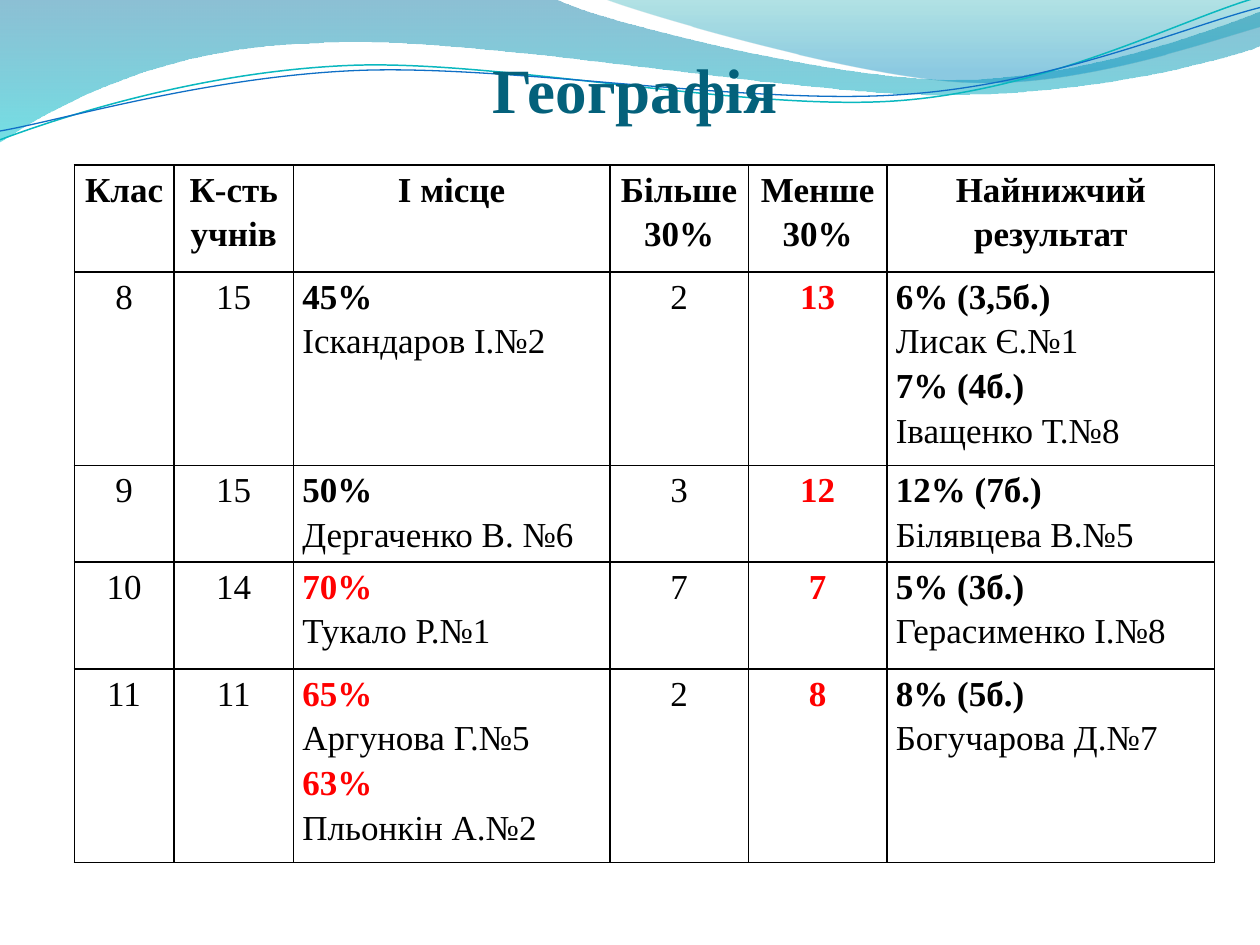
"""Build the geography results slide with its wave header and class table."""
from lxml import etree
from pptx import Presentation
from pptx.dml.color import RGBColor
from pptx.enum.text import MSO_ANCHOR, PP_ALIGN
from pptx.oxml.ns import qn
from pptx.util import Inches, Pt

CENTER, LEFT = PP_ALIGN.CENTER, PP_ALIGN.LEFT
BOTTOM = MSO_ANCHOR.BOTTOM
FONT = "Times New Roman"
BLACK, RED, TEAL = "000000", "FF0000", "04617B"

TITLE = "Географія"
ROWS = [
    ("Клас", "К-сть учнів", "І місце", "Більше\n30%", "Менше 30%", "Найнижчий результат"),
    ("8", "15", "45%\nІскандаров І.№2", "2", "13",
     "6% (3,5б.)\nЛисак Є.№1\n7% (4б.)\nІващенко Т.№8"),
    ("9", "15", "50%\nДергаченко В. №6", "3", "12", "12% (7б.)\nБілявцева В.№5"),
    ("10", "14", "70%\nТукало Р.№1", "7", "7", "5% (3б.)\nГерасименко І.№8"),
    ("11", "11", "65%\nАргунова Г.№5\n63%\nПльонкін А.№2", "2", "8",
     "8% (5б.)\nБогучарова Д.№7"),
]
WIDTHS = (0.79, 0.95, 2.51, 1.1, 1.1, 2.6)
HEIGHTS = (0.85, 1.44, 0.76, 0.85, 0.85)
NAMES = (2, 5)
LOW = 4
TOP = {"70%", "65%", "63%"}

WAVES = [
    ([(0, 0), (4.4, -0.01), (4.76, 0.17, 6.64, 0.63, 7.58, 0.63),
      (8.53, 0.63, 9.58, 0.26, 10, 0.09), (10.01, 0.36),
      (9.83, 0.44, 8.7, 0.76, 7.46, 0.75), (6.22, 0.75, 3.82, 0.28, 2.57, 0.34),
      (1.29, 0.36, 0.46, 0.83, -0.01, 1.13)],
     [(0, "0074A1", 45), (1, "00C6CF", 55)]),
    ([(4.79, -0.01), (5.09, 0.11, 6.82, 0.62, 7.69, 0.65),
      (8.56, 0.69, 9.61, 0.32, 10, 0.21), (10, 0)],
     [(0, "00A1A9", 30), (0.8, "008BBF", 45)]),
]
CURVES = [
    ([(0, 1.11), (0.48, 0.93, 1.58, 0.57, 2.77, 0.52),
      (3.95, 0.47, 5.93, 0.89, 7.13, 0.8), (8.33, 0.71, 9.38, 0.15, 9.98, -0.02)],
     "0AB8BF", 0.85),
    ([(0, 1.04), (0.47, 0.96, 1.64, 0.61, 2.83, 0.56),
      (4.03, 0.51, 5.97, 0.84, 7.17, 0.75), (8.36, 0.67, 9.41, 0.21, 10, 0.06)],
     "0F6FC6", 0.75),
]


def rgb(code):
    """Turn a hex string into a colour."""
    return RGBColor.from_string(code)


def draw(slide, parts, close):
    """Add an outline whose parts are lines (2 numbers) or curves (6 numbers)."""
    dots = [(Inches(part[i]), Inches(part[i + 1]))
            for part in parts for i in range(0, len(part), 2)]
    pen = slide.shapes.build_freeform(*dots[0], scale=1.0)
    pen.add_line_segments(dots[1:], close=close)
    shape = pen.convert_to_shape()
    shape.shadow.inherit = False
    legs = iter(list(shape.element.spPr.iter(qn("a:lnTo"))))
    for part in parts[1:]:
        leg = next(legs)
        if len(part) == 6:
            leg.tag = qn("a:cubicBezTo")
            for _ in range(2):
                extra = next(legs)
                leg.append(extra[0])
                extra.getparent().remove(extra)
    return shape


def add_wave(slide, parts, stops):
    """Add a closed wave with a see-through gradient from top to bottom."""
    shape = draw(slide, parts, True)
    shape.line.fill.background()
    shape.fill.gradient()
    shape.fill.gradient_angle = 270
    for stop, (place, code, _) in zip(shape.fill.gradient_stops, stops):
        stop.position = place
        stop.color.rgb = rgb(code)
    for tint, (_, _, alpha) in zip(shape.element.spPr.iter(qn("a:srgbClr")), stops):
        etree.SubElement(tint, qn("a:alpha"), val=str(alpha * 1000))


def add_curve(slide, parts, code, width):
    """Add an open curved line."""
    shape = draw(slide, parts, False)
    shape.fill.background()
    shape.line.color.rgb = rgb(code)
    shape.line.width = Pt(width)


def style(para, size, code, bold, align):
    """Set the alignment of a paragraph and the font of its text in all scripts."""
    para.alignment = align
    for run in para.runs:
        font = run.font
        font.name, font.size, font.bold = FONT, Pt(size), bold
        font.color.rgb = rgb(code)
        for tag in ("a:ea", "a:cs"):
            etree.SubElement(run._r.get_or_add_rPr(), qn(tag), typeface=FONT)


def add_title(slide):
    """Add the slide title."""
    box = slide.shapes.add_textbox(Inches(0.5), Inches(0.21), Inches(9.08), Inches(0.79))
    frame = box.text_frame
    frame.word_wrap = True
    frame.vertical_anchor = BOTTOM
    frame.margin_left = frame.margin_right = frame.margin_bottom = 0
    frame.margin_top = Inches(0.05)
    frame.text = TITLE
    style(frame.paragraphs[0], 36, TEAL, True, CENTER)


def add_edges(cell):
    """Draw a thin black line on all sides of a cell."""
    props = cell._tc.get_or_add_tcPr()
    for i, side in enumerate(("a:lnL", "a:lnR", "a:lnT", "a:lnB")):
        edge = etree.Element(qn(side), w=str(Pt(1)))
        fill = etree.SubElement(edge, qn("a:solidFill"))
        etree.SubElement(fill, qn("a:srgbClr"), val=BLACK)
        props.insert(i, edge)


def fill_cell(cell, text, row, col):
    """Write one cell and style its lines by row and column."""
    cell.fill.background()
    cell.margin_left = cell.margin_right = Inches(0.07)
    cell.margin_top = cell.margin_bottom = 0
    cell.text = text
    align = LEFT if row and col in NAMES else CENTER
    for para in cell.text_frame.paragraphs:
        red = row > 0 and (col == LOW or para.text in TOP)
        bold = row == 0 or red or "%" in para.text
        style(para, 20, RED if red else BLACK, bold, align)
        para.line_spacing = 1.15
    add_edges(cell)


def add_grid(slide):
    """Add the table of results."""
    table = slide.shapes.add_table(
        len(ROWS), len(WIDTHS), Inches(0.59), Inches(1.31),
        Inches(sum(WIDTHS)), Inches(sum(HEIGHTS))).table
    table.first_row = table.horz_banding = False
    for col, width in zip(table.columns, WIDTHS):
        col.width = Inches(width)
    for i, (texts, height) in enumerate(zip(ROWS, HEIGHTS)):
        table.rows[i].height = Inches(height)
        for j, text in enumerate(texts):
            fill_cell(table.cell(i, j), text, i, j)


def main():
    """Build and save the slide."""
    deck = Presentation()
    deck.slide_width, deck.slide_height = Inches(10), Inches(7.5)
    slide = deck.slides.add_slide(deck.slide_layouts[6])
    for wave in WAVES:
        add_wave(slide, *wave)
    for curve in CURVES:
        add_curve(slide, *curve)
    add_title(slide)
    add_grid(slide)
    deck.save("out.pptx")


if __name__ == "__main__":
    main()
